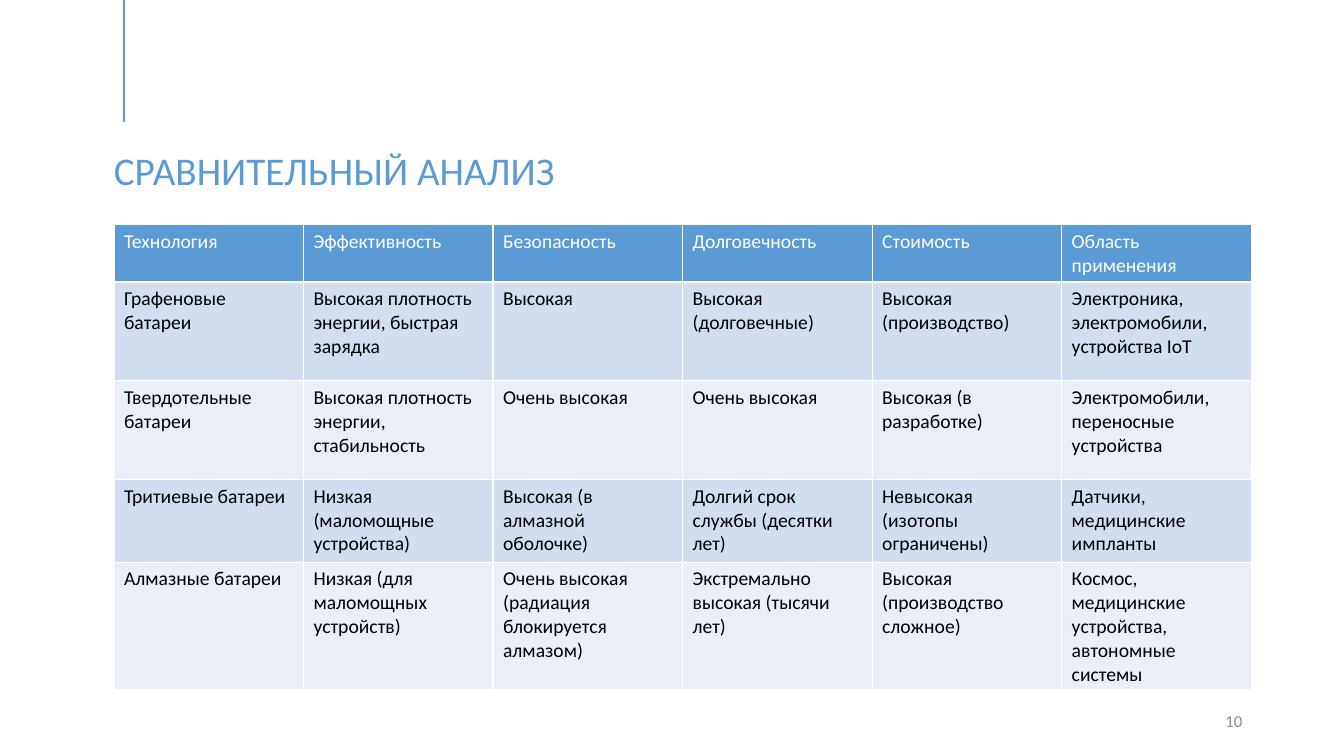
"""Build the slide that compares battery technologies."""
from dataclasses import dataclass

import pptx
import pptx.dml.color
import pptx.enum.shapes
import pptx.enum.text
import pptx.oxml.ns
import pptx.slide
import pptx.text.text
import pptx.util
from lxml import etree
from pptx.util import Inches

FONT = "Calibri"
COLORS = {
    "accent": "5B9BD5",
    "white": "FFFFFF",
    "black": "000000",
    "band_dark": "D2DEEF",
    "band_light": "EAEFF7",
    "number": "8C8C8C",
}
LEFT = 1.13
COL_WIDTH = 1.88


@dataclass
class TableRow:
    """One table row with its height, colours and cell texts."""
    height: float
    fill: str
    color: str
    texts: list[str]


ROWS = [
    TableRow(0.54, "accent", "white", [
        "Технология", "Эффективность", "Безопасность",
        "Долговечность", "Стоимость", "Область применения"]),
    TableRow(0.98, "band_dark", "black", [
        "Графеновые батареи", "Высокая плотность энергии, быстрая зарядка",
        "Высокая", "Высокая (долговечные)", "Высокая (производство)",
        "Электроника, электромобили, устройства IoT"]),
    TableRow(0.98, "band_light", "black", [
        "Твердотельные батареи", "Высокая плотность энергии, стабильность",
        "Очень высокая", "Очень высокая", "Высокая (в разработке)",
        "Электромобили, переносные устройства"]),
    TableRow(0.82, "band_dark", "black", [
        "Тритиевые батареи", "Низкая (маломощные устройства)",
        "Высокая (в алмазной оболочке)", "Долгий срок службы (десятки лет)",
        "Невысокая (изотопы ограничены)", "Датчики, медицинские импланты"]),
    TableRow(1.21, "band_light", "black", [
        "Алмазные батареи", "Низкая (для маломощных устройств)",
        "Очень высокая (радиация блокируется алмазом)",
        "Экстремально высокая (тысячи лет)", "Высокая (производство сложное)",
        "Космос, медицинские устройства, автономные системы"]),
]


def rgb(name: str) -> pptx.dml.color.RGBColor:
    """Return the named colour."""
    return pptx.dml.color.RGBColor.from_string(COLORS[name])


def write(tf: pptx.text.text.TextFrame, text: str, size: float, color: str,
          align: pptx.enum.text.PP_ALIGN = pptx.enum.text.PP_ALIGN.LEFT) -> None:
    """Put one formatted paragraph into a text frame."""
    tf.text = text
    tf.word_wrap = True
    p = tf.paragraphs[0]
    p.alignment = align
    p.font.name = FONT
    p.font.size = pptx.util.Pt(size)
    p.font.bold = False
    p.font.color.rgb = rgb(color)


def add_accent_line(s: pptx.slide.Slide) -> None:
    """Draw the vertical line above the title."""
    line = s.shapes.add_connector(
        pptx.enum.shapes.MSO_CONNECTOR.STRAIGHT,
        Inches(1.23), Inches(0), Inches(1.23), Inches(1.21))
    line.line.color.rgb = rgb("accent")
    line.line.width = pptx.util.Pt(1.5)
    etree.SubElement(line._element.spPr, pptx.oxml.ns.qn("a:effectLst"))


def add_title(s: pptx.slide.Slide) -> None:
    """Fill and place the title placeholder."""
    sp = s.shapes.title
    sp.left, sp.top, sp.width, sp.height = map(Inches, (LEFT, 1.21, 11.5, 1.01))
    tf = sp.text_frame
    write(tf, "СРАВНИТЕЛЬНЫЙ АНАЛИЗ", 28, "accent")
    tf.margin_left = 0
    tf.vertical_anchor = pptx.enum.text.MSO_ANCHOR.MIDDLE
    tf.paragraphs[0].line_spacing = 0.9


def add_comparison(s: pptx.slide.Slide) -> None:
    """Add the comparison table."""
    cols = len(ROWS[0].texts)
    table = s.shapes.add_table(
        len(ROWS), cols, Inches(LEFT), Inches(2.23), Inches(cols * COL_WIDTH),
        Inches(sum(row.height for row in ROWS))).table
    for col in table.columns:
        col.width = Inches(COL_WIDTH)
    for i, row in enumerate(ROWS):
        table.rows[i].height = Inches(row.height)
        for cell, text in zip(table.rows[i].cells, row.texts):
            cell.fill.solid()
            cell.fill.fore_color.rgb = rgb(row.fill)
            write(cell.text_frame, text, 14, row.color)


def add_number(s: pptx.slide.Slide) -> None:
    """Add the slide number."""
    tf = s.shapes.add_textbox(
        Inches(9.42), Inches(6.95), Inches(3), Inches(0.4)).text_frame
    write(tf, "10", 12, "number", pptx.enum.text.PP_ALIGN.RIGHT)
    tf.vertical_anchor = pptx.enum.text.MSO_ANCHOR.MIDDLE


def main() -> None:
    """Build and save the presentation."""
    prs = pptx.Presentation()
    prs.slide_width, prs.slide_height = Inches(13.33), Inches(7.5)
    s = prs.slides.add_slide(prs.slide_layouts.get_by_name("Title Only"))
    add_accent_line(s)
    add_title(s)
    add_number(s)
    add_comparison(s)
    prs.save("out.pptx")


if __name__ == "__main__":
    main()
